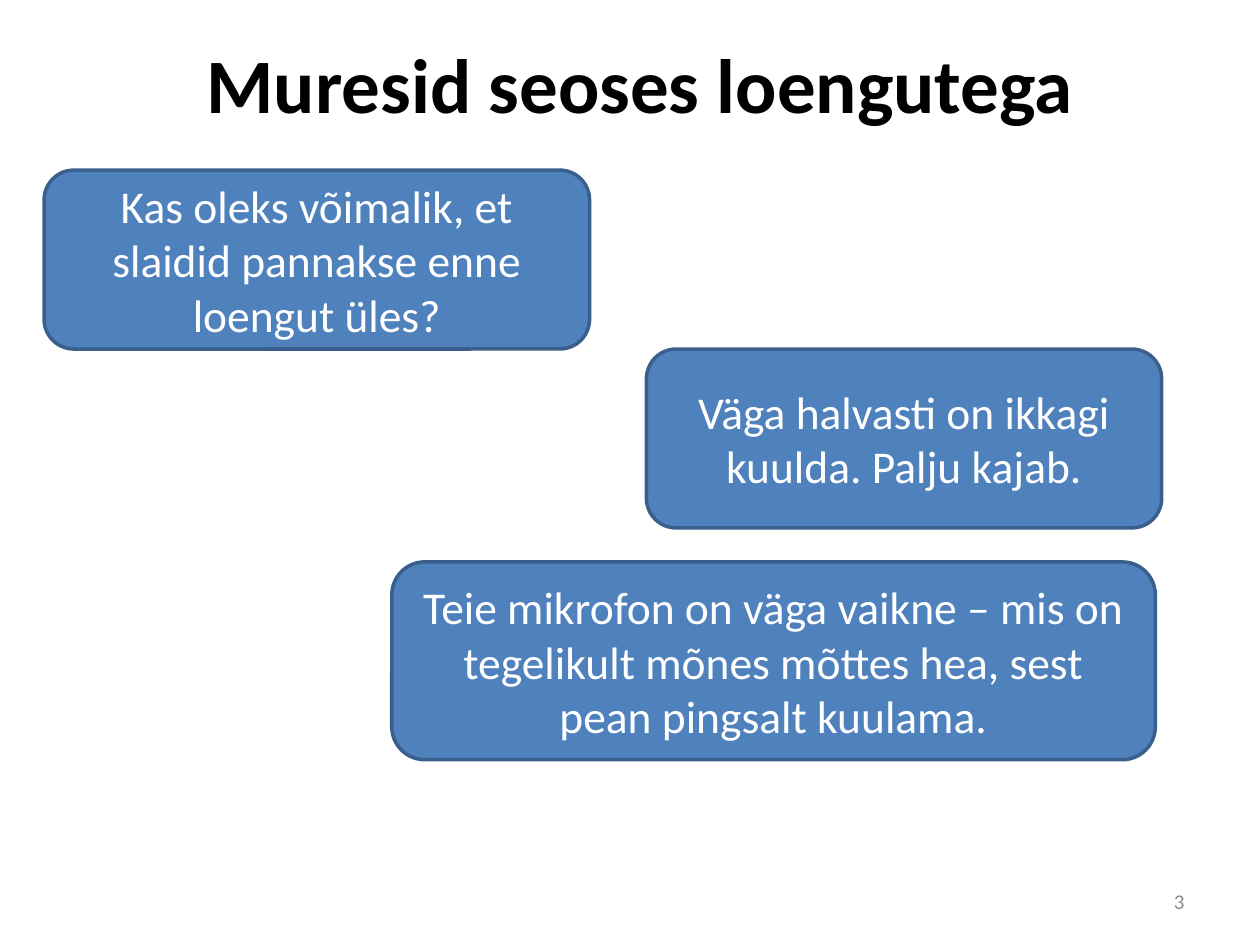
from pptx import Presentation
from pptx.dml.color import RGBColor
from pptx.enum.shapes import MSO_SHAPE as Shape
from pptx.enum.text import MSO_ANCHOR as Anchor, PP_ALIGN as Align
from pptx.util import Inches, Pt

FONT = "Calibri"
CONCERNS = [
    ("Kas oleks võimalik, et slaidid pannakse enne loengut üles?",
     (0.35, 1.35, 4.33, 1.42)),
    ("Väga halvasti on ikkagi kuulda. Palju kajab.",
     (5.13, 2.77, 4.09, 1.42)),
    ("Teie mikrofon on väga vaikne – mis on tegelikult mõnes mõttes hea, "
     "sest pean pingsalt kuulama.",
     (3.11, 4.46, 6.06, 1.57)),
]


def color(hex_value):
    return RGBColor.from_string(hex_value)


def write(shape, text, size, hex_value, align, anchor=Anchor.MIDDLE,
          bold=False, wrap=True):
    frame = shape.text_frame
    frame.word_wrap = wrap
    frame.vertical_anchor = anchor
    para = frame.paragraphs[0]
    para.text = text
    para.alignment = align
    font = para.font
    font.name, font.size, font.bold = FONT, Pt(size), bold
    font.color.rgb = color(hex_value)


def add_title(page, text, area):
    title = page.shapes.title
    title.left, title.top, title.width, title.height = map(Inches, area)
    write(title, text, 44, "000000", Align.LEFT, Anchor.TOP,
          bold=True, wrap=False)


def add_concern(page, text, area):
    box = page.shapes.add_shape(Shape.ROUNDED_RECTANGLE, *map(Inches, area))
    box.shadow.inherit = False
    box.fill.solid()
    box.fill.fore_color.rgb = color("4F81BD")
    box.line.color.rgb = color("3A5F8C")
    box.line.width = Pt(2)
    write(box, text, 26, "FFFFFF", Align.CENTER)


def add_page_number(page, text, area):
    box = page.shapes.add_textbox(*map(Inches, area))
    write(box, text, 12, "8C8C8C", Align.RIGHT)


def main():
    deck = Presentation()
    deck.slide_width, deck.slide_height = Inches(10), Inches(7.5)
    page = deck.slides.add_slide(deck.slide_layouts[5])

    # Heading
    add_title(page, "Muresid seoses loengutega", (1.54, 0.24, 7.14, 0.84))

    # Student concerns
    for text, area in CONCERNS:
        add_concern(page, text, area)

    # Footer
    add_page_number(page, "3", (7.17, 6.95, 2.33, 0.4))

    deck.save("out.pptx")


if __name__ == "__main__":
    main()
